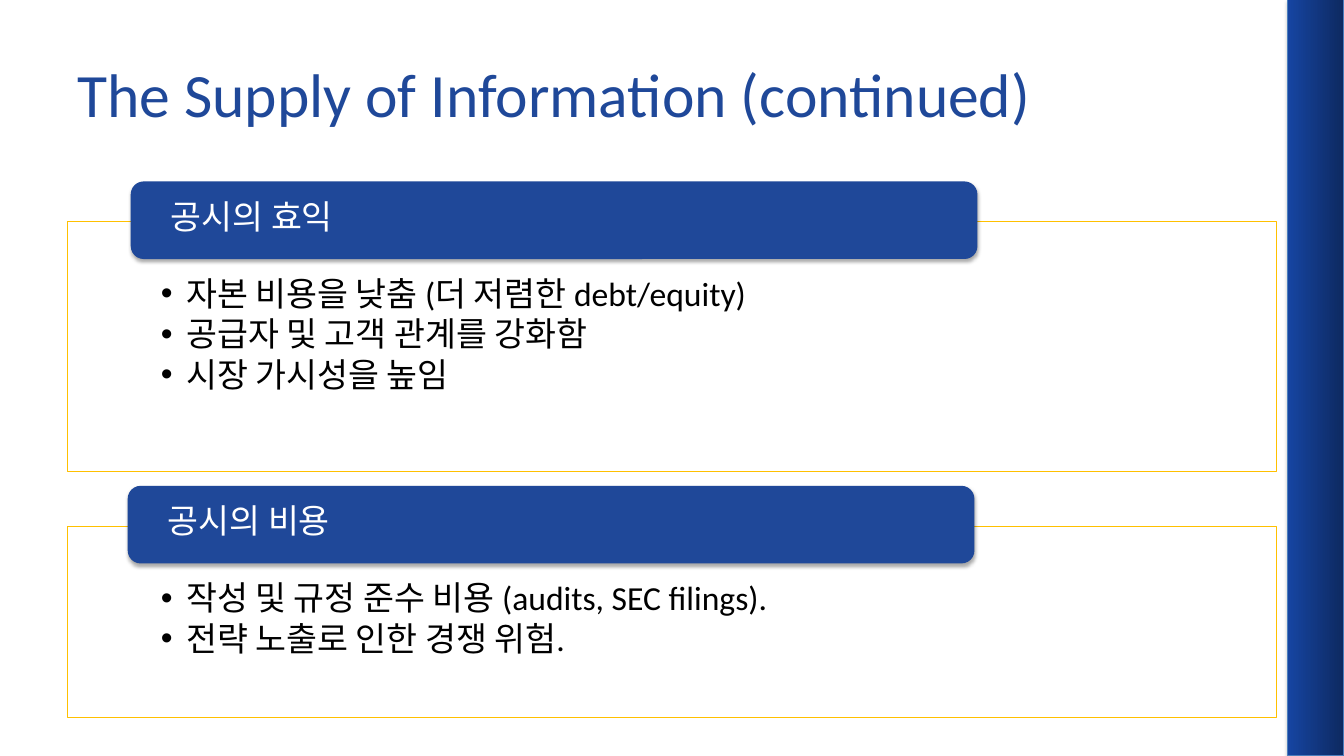
from dataclasses import dataclass

from lxml import etree
from pptx import Presentation
from pptx.dml.color import RGBColor
from pptx.enum.shapes import MSO_SHAPE
from pptx.enum.text import MSO_ANCHOR, MSO_AUTO_SIZE, PP_ALIGN
from pptx.oxml import parse_xml
from pptx.oxml.ns import qn
from pptx.util import Inches, Pt

RECT, ROUND_RECT = MSO_SHAPE.RECTANGLE, MSO_SHAPE.ROUNDED_RECTANGLE
TOP, MIDDLE = MSO_ANCHOR.TOP, MSO_ANCHOR.MIDDLE
LEFT = PP_ALIGN.LEFT
NO_FIT = MSO_AUTO_SIZE.NONE
TWO_CONTENT = 3

WIDTH, HEIGHT = 13.33, 7.5
MARGIN = WIDTH / 20
CONTENT_WIDTH = WIDTH - 2 * MARGIN


@dataclass(frozen=True)
class Theme:
    font: str = "Calibri"
    title_size: int = 44
    text_size: int = 24
    blue: str = "1F4899"
    gold: str = "FFC000"
    white: str = "FFFFFF"
    black: str = "000000"
    strip_light: str = "1645A2"
    strip_dark: str = "0D2960"
    strip_line: str = "4B7EBC"


THEME = Theme()

# Each section: panel top, panel height, header offset, heading, points
SECTIONS = [
    (2.2, 2.48, 0.63, "공시의 효익",
     ["자본 비용을 낮춤 (더 저렴한 debt/equity)",
      "공급자 및 고객 관계를 강화함",
      "시장 가시성을 높임"]),
    (5.22, 1.9, 0.6, "공시의 비용",
     ["작성 및 규정 준수 비용 (audits, SEC filings).",
      "전략 노출로 인한 경쟁 위험."]),
]

SHADOW = (
    '<a:effectLst xmlns:a="http://schemas.openxmlformats.org/drawingml/2006/main">'
    '<a:outerShdw blurRad="39370" dist="22860" dir="5400000" rotWithShape="0">'
    '<a:srgbClr val="000000"><a:alpha val="35000"/></a:srgbClr>'
    '</a:outerShdw></a:effectLst>')


def rgb(value):
    return RGBColor.from_string(value)


def place(sp, left, top, width, height):
    sp.left, sp.top = Inches(left), Inches(top)
    sp.width, sp.height = Inches(width), Inches(height)


def style_text(p, size, color):
    p.alignment = LEFT
    p.font.name = THEME.font
    p.font.size = Pt(size)
    p.font.color.rgb = rgb(color)


def set_frame(tf, anchor, left, top, right, bottom):
    tf.word_wrap = True
    tf.auto_size = NO_FIT
    tf.vertical_anchor = anchor
    tf.margin_left, tf.margin_top = Inches(left), Inches(top)
    tf.margin_right, tf.margin_bottom = Inches(right), Inches(bottom)


def add_shadowed(s, kind, left, top, width, height):
    sp = s.shapes.add_shape(kind, Inches(left), Inches(top),
                            Inches(width), Inches(height))
    sp.shadow.inherit = False
    sp_pr = sp.fill._xPr
    sp_pr.replace(sp_pr.find(qn("a:effectLst")), parse_xml(SHADOW))
    return sp


def add_bullet(p):
    p_pr = p._p.get_or_add_pPr()
    p_pr.set("marL", str(Inches(0.25)))
    p_pr.set("indent", str(-Inches(0.25)))
    etree.SubElement(p_pr, qn("a:buChar"), char="•")


# Gradient strip along the right edge
def draw_strip(s, left, top, width, height):
    sp = add_shadowed(s, RECT, left, top, width, height)
    sp.fill.gradient()
    sp.fill.gradient_angle = 0
    for stop, color in zip(sp.fill.gradient_stops,
                           (THEME.strip_light, THEME.strip_dark)):
        stop.color.rgb = rgb(color)
    sp.line.color.rgb = rgb(THEME.strip_line)
    sp.line.width = Pt(0.75)


# Slide title
def draw_title(s, left, top, width, height, text):
    sp = s.shapes.title
    place(sp, left, top, width, height)
    set_frame(sp.text_frame, MIDDLE, 0.1, 0.05, 0.1, 0.05)
    sp.text_frame.text = text
    style_text(sp.text_frame.paragraphs[0], THEME.title_size, THEME.blue)


# Outlined panel with its bullet list
def draw_panel(sp, left, top, width, height, points):
    place(sp, left, top, width, height)
    sp.fill.solid()
    sp.fill.fore_color.rgb = rgb(THEME.white)
    sp.line.color.rgb = rgb(THEME.gold)
    sp.line.width = Pt(0.75)
    tf = sp.text_frame
    set_frame(tf, TOP, 0.93, 0.55, 0.93, 0.19)
    tf.text = "\n".join(points)
    for p in tf.paragraphs:
        p.line_spacing = 0.9
        p.space_before = Pt(0)
        p.space_after = Pt(3)
        add_bullet(p)
        style_text(p, THEME.text_size, THEME.black)


# Rounded heading that straddles the panel's top edge
def draw_heading(s, left, top, width, height, text):
    sp = add_shadowed(s, ROUND_RECT, left, top, width, height)
    sp.fill.solid()
    sp.fill.fore_color.rgb = rgb(THEME.blue)
    sp.line.fill.background()
    set_frame(sp.text_frame, MIDDLE, 0.36, 0, 0.36, 0.04)
    p = sp.text_frame.paragraphs[0]
    p.text = text
    p.line_spacing = 0.9
    style_text(p, THEME.text_size, THEME.white)


def draw_section(s, body, left, top, width, height, offset, heading, points):
    draw_panel(body, left, top, width, height, points)
    draw_heading(s, left + offset, top - 0.4, width * 0.7, 0.77, heading)


def main():
    prs = Presentation()
    prs.slide_width, prs.slide_height = Inches(WIDTH), Inches(HEIGHT)
    s = prs.slides.add_slide(prs.slide_layouts[TWO_CONTENT])
    title, *bodies = s.placeholders

    draw_strip(s, WIDTH - 0.56, 0, 0.56, HEIGHT)
    draw_title(s, MARGIN, HEIGHT * 0.04, CONTENT_WIDTH, HEIGHT / 6,
               "The Supply of Information (continued)")
    for body, (top, height, offset, heading, points) in zip(bodies, SECTIONS):
        draw_section(s, body, MARGIN, top, CONTENT_WIDTH, height,
                     offset, heading, points)

    prs.save("out.pptx")


if __name__ == "__main__":
    main()
